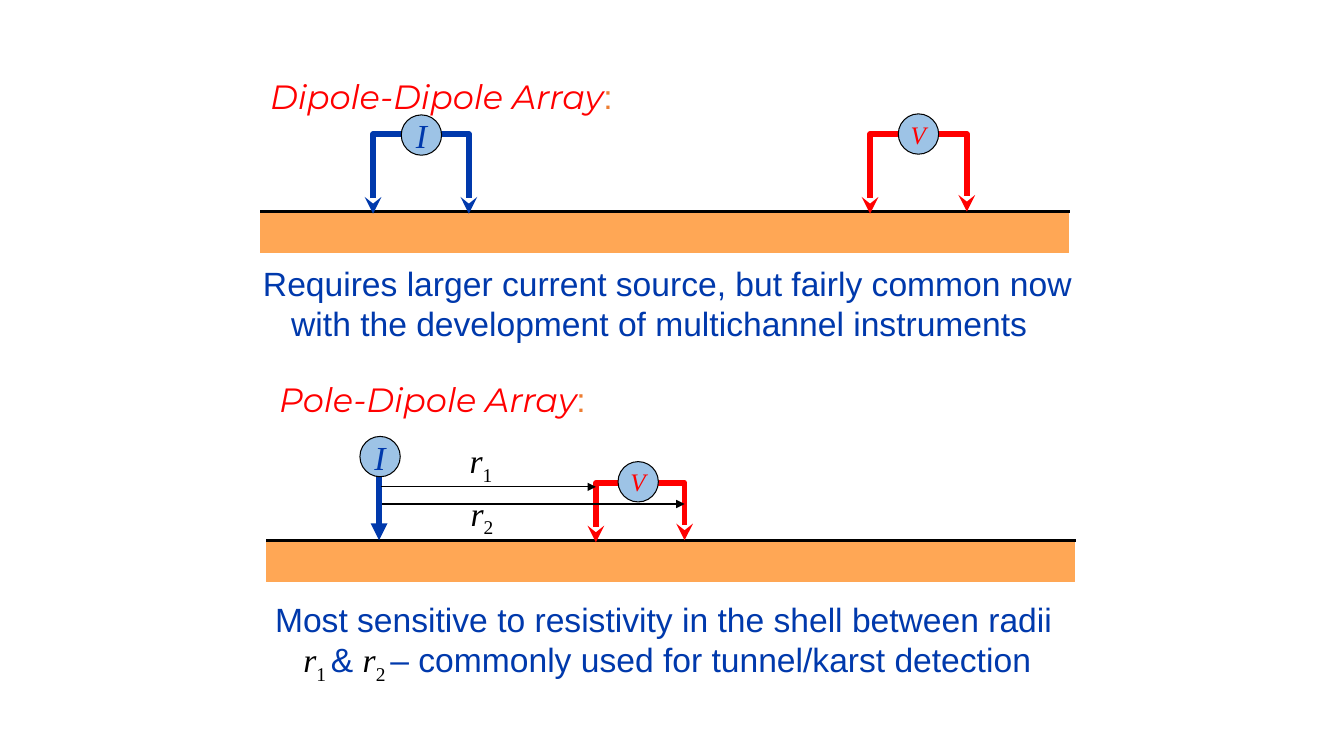
"""Builds a slide comparing dipole-dipole and pole-dipole resistivity arrays."""
import pptx
import pptx.util
import pptx.dml.color
import pptx.enum.shapes
import pptx.enum.text
import pptx.oxml
import pptx.oxml.ns

PX = 9144
CIRCLE = 40
INDENT = 28
COLORS = {"red": "FF0000", "blue": "0039AC", "orange": "ED7D31", "soil": "FFA755",
          "circle": "9DC3E6", "black": "000000"}
STYLES = {
    "title": ("Montserrat", 24, "red", True, 0),
    "colon": ("Arial", 24, "orange", False, 0),
    "body": ("Arial", 24, "blue", False, 0),
    "symbol": ("Times New Roman", 24, "black", True, 0),
    "index": ("Times New Roman", 24, "black", False, -25000),
    "current": ("Times New Roman", 24, "blue", True, 0),
    "voltage": ("Times New Roman", 18, "red", True, 0),
}

GROUNDS = [(258, 210), (264, 536)]
WIRES = [
    ("blue", [(370, 212), (370, 133), (465, 133), (465, 212)]),
    ("red", [(863, 212), (863, 133), (959, 133), (959, 210)]),
    ("red", [(591, 538), (591, 479), (679, 479), (679, 536)]),
]
ARROWS = [
    ((376, 459), (376, 536), "blue", 4),
    ((378, 483), (591, 483), "black", 0.75),
    ((379, 500), (679, 500), "black", 0.75),
]
METERS = [
    (398, 114, "I", "current"),
    (891, 113, "V", "voltage"),
    (357, 433, "I", "current"),
    (613, 458, "V", "voltage"),
]
TEXTS = [
    ((258, 70, 395, 50), [[("Dipole-Dipole Array", "title"), (":", "colon")]]),
    ((251, 256, 831, 91), [
        [("Requires larger current source, but fairly common now", "body")],
        [("with the development of multichannel instruments", "body")]]),
    ((267, 371, 359, 50), [[("Pole-Dipole Array", "title"), (":", "colon")]]),
    ((263, 589, 817, 91), [
        [("Most sensitive to resistivity in the shell between radii", "body")],
        [("r", "symbol"), ("1 ", "index"), ("& ", "body"), ("r", "symbol"), ("2 ", "index"),
         ("– commonly used for tunnel/karst detection", "body")]]),
    ((456, 432, 44, 50), [[("r", "symbol"), ("1", "index")]]),
    ((457, 484, 44, 50), [[("r", "symbol"), ("2", "index")]]),
]


def rgb(name):
    return pptx.dml.color.RGBColor.from_string(COLORS[name])


def emu(*lengths):
    return [length * PX for length in lengths]


def set_line(shape, color, width):
    shape.line.color.rgb = rgb(color)
    shape.line.width = pptx.util.Pt(width)


def add_line_part(shape, tag, **attributes):
    part = pptx.oxml.parse_xml(f"<a:{tag} {pptx.oxml.ns.nsdecls('a')}/>")
    for name, value in attributes.items():
        part.set(name, value)
    shape.line._get_or_add_ln().append(part)


def add_run(paragraph, text, style):
    font_name, size, color, italic, baseline = STYLES[style]
    run = paragraph.add_run()
    run.text = text
    run.font.name = font_name
    run.font.size = pptx.util.Pt(size)
    run.font.color.rgb = rgb(color)
    run.font.italic = italic
    if baseline:
        run.font._element.set("baseline", str(baseline))


def add_shape(shapes, kind, box, fill, line):
    shape = shapes.add_shape(kind, *emu(*box))
    shape.shadow.inherit = False
    shape.fill.solid()
    shape.fill.fore_color.rgb = rgb(fill)
    set_line(shape, line, 0.75)
    return shape


def add_straight(shapes, start, end, color, width):
    line = shapes.add_connector(pptx.enum.shapes.MSO_CONNECTOR.STRAIGHT, *emu(*start, *end))
    set_line(line, color, width)
    line._element.spPr.append(
        pptx.oxml.parse_xml(f"<a:effectLst {pptx.oxml.ns.nsdecls('a')}/>"))
    return line


def add_ground(shapes, left, top):
    add_shape(shapes, pptx.enum.shapes.MSO_SHAPE.RECTANGLE,
              (left, top + 1, 802, 40), "soil", "soil")
    add_straight(shapes, (left, top), (left + 803, top), "black", 2)


def add_wire(shapes, color, points):
    builder = shapes.build_freeform(*points[0], scale=PX)
    builder.add_line_segments(points[1:], close=False)
    wire = builder.convert_to_shape()
    wire.shadow.inherit = False
    wire.fill.background()
    set_line(wire, color, 4)
    add_line_part(wire, "round")
    for end in ("headEnd", "tailEnd"):
        add_line_part(wire, end, type="stealth")


def add_meter(shapes, left, top, letter, style):
    meter = add_shape(shapes, pptx.enum.shapes.MSO_SHAPE.OVAL,
                      (left, top, CIRCLE, CIRCLE), "circle", "black")
    frame = meter.text_frame
    frame.word_wrap = False
    frame.vertical_anchor = pptx.enum.text.MSO_ANCHOR.MIDDLE
    frame.paragraphs[0].alignment = pptx.enum.text.PP_ALIGN.CENTER
    add_run(frame.paragraphs[0], letter, style)


def add_text(shapes, box, lines):
    frame = shapes.add_textbox(*emu(*box)).text_frame
    frame.word_wrap = False
    frame.auto_size = pptx.enum.text.MSO_AUTO_SIZE.SHAPE_TO_FIT_TEXT
    for index, runs in enumerate(lines):
        paragraph = frame.add_paragraph() if index else frame.paragraphs[0]
        if index:
            paragraph._p.get_or_add_pPr().set("marL", str(INDENT * PX))
        for text, style in runs:
            add_run(paragraph, text, style)


def main():
    presentation = pptx.Presentation()
    presentation.slide_width, presentation.slide_height = emu(1333, 750)
    shapes = presentation.slides.add_slide(presentation.slide_layouts[6]).shapes
    for ground in GROUNDS:
        add_ground(shapes, *ground)
    for wire in WIRES:
        add_wire(shapes, *wire)
    for arrow in ARROWS:
        add_line_part(add_straight(shapes, *arrow), "tailEnd", type="triangle")
    for meter in METERS:
        add_meter(shapes, *meter)
    for text in TEXTS:
        add_text(shapes, *text)
    presentation.save("out.pptx")


if __name__ == "__main__":
    main()
